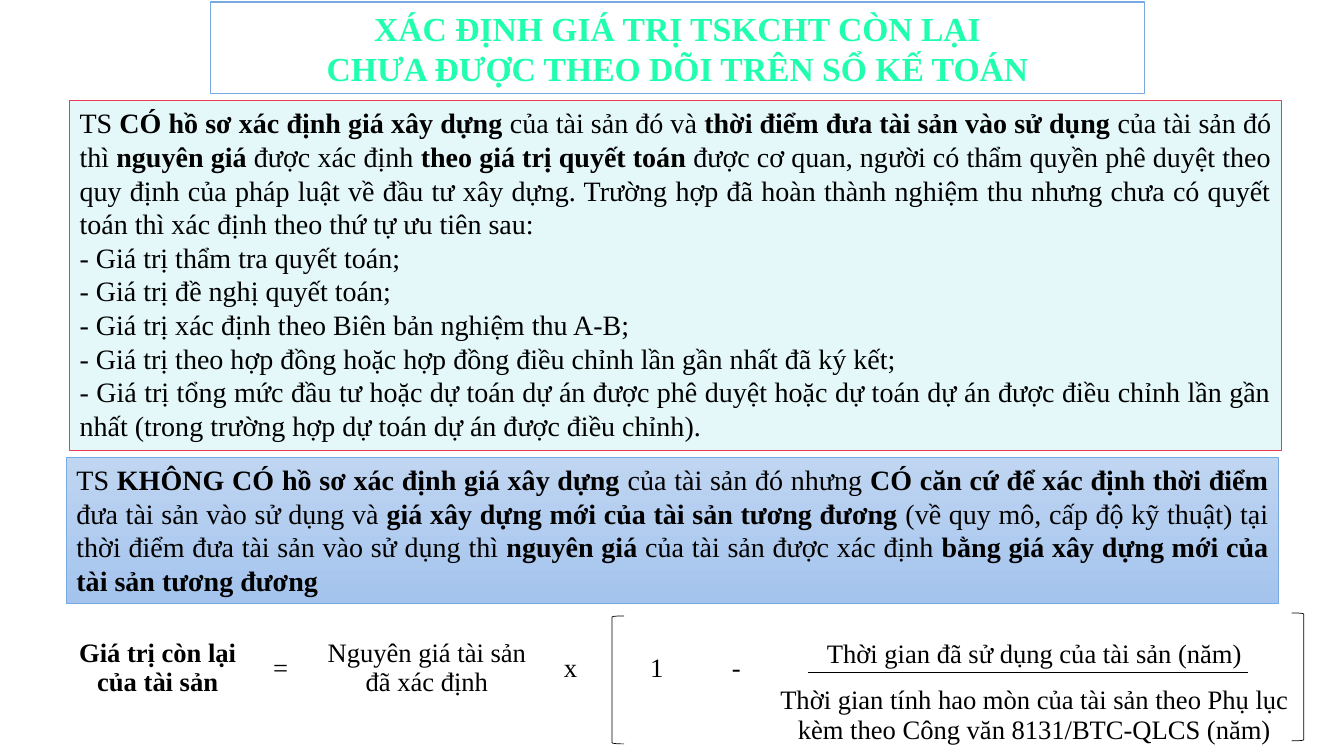
"""Build a slide on valuing infrastructure assets not yet recorded in the books."""
import pptx
import pptx.util
import pptx.dml.color
import pptx.enum.shapes
import pptx.enum.text
import pptx.oxml.ns
from dataclasses import dataclass
from lxml import etree

Pt = pptx.util.Pt
ALIGN = pptx.enum.text.PP_ALIGN
SHAPE = pptx.enum.shapes.MSO_SHAPE
ANCHOR = pptx.enum.text.MSO_ANCHOR
qn = pptx.oxml.ns.qn

TITLE = ["XÁC ĐỊNH GIÁ TRỊ TSKCHT CÒN LẠI", "CHƯA ĐƯỢC THEO DÕI TRÊN SỔ KẾ TOÁN"]

# Runs alternate between regular and bold.
WITH_FILE = [
    (ALIGN.JUSTIFY, [
        "TS ", "CÓ hồ sơ xác định giá xây dựng ", "của tài sản đó và ",
        "thời điểm đưa tài sản vào sử dụng ", "của tài sản đó thì ", "nguyên giá ",
        "được xác định ", "theo giá trị quyết toán ",
        "được cơ quan, người có thẩm quyền phê duyệt theo quy định của pháp luật về đầu tư "
        "xây dựng. Trường hợp đã hoàn thành nghiệm thu nhưng chưa có quyết toán thì xác định "
        "theo thứ tự ưu tiên sau:"]),
    (ALIGN.LEFT, ["- Giá trị thẩm tra quyết toán;"]),
    (ALIGN.LEFT, ["- Giá trị đề nghị quyết toán;"]),
    (ALIGN.LEFT, ["- Giá trị xác định theo Biên bản nghiệm thu A-B;"]),
    (ALIGN.LEFT, ["- Giá trị theo hợp đồng hoặc hợp đồng điều chỉnh lần gần nhất đã ký kết;"]),
    (ALIGN.JUSTIFY, [
        "- Giá trị tổng mức đầu tư hoặc dự toán dự án được phê duyệt hoặc dự toán dự án được "
        "điều chỉnh lần gần nhất (trong trường hợp dự toán dự án được điều chỉnh)."]),
]
WITHOUT_FILE = [
    (ALIGN.JUSTIFY, [
        "TS ", "KHÔNG CÓ hồ sơ xác định giá xây dựng ", "của tài sản đó nhưng ",
        "CÓ căn cứ để xác định thời điểm ", "đưa tài sản vào sử dụng và ",
        "giá xây dựng mới của tài sản tương đương",
        " (về quy mô, cấp độ kỹ thuật) tại thời điểm đưa tài sản vào sử dụng thì ",
        "nguyên giá ", "của tài sản được xác định ",
        "bằng giá xây dựng mới của tài sản tương đương"]),
]
FORMULA = [
    (1.71, ["", "Giá trị còn lại của tài sản"]),
    (0.73, ["="]),
    (2.17, ["Nguyên giá tài sản đã xác định"]),
    (0.68, ["x"]),
    (1.03, ["1"]),
    (0.55, ["-"]),
]
FRACTION_WIDTH = 5.36
FRACTION = ["Thời gian đã sử dụng của tài sản (năm)",
            "Thời gian tính hao mòn của tài sản theo Phụ lục kèm theo Công văn 8131/BTC-QLCS (năm)"]

PLACES = {
    "title": (15.68, 0.27, 69.47, 12.13),
    "with_file": (5.17, 13.33, 90.17, 46.27),
    "without_file": (4.95, 60.53, 90.17, 19.33),
    "formula": (5.32, 77.73, 91.75, 21.33),
}
BRACKETS = [(SHAPE.LEFT_BRACKET, (45.54, 81.47, 0.9, 16.93)),
            (SHAPE.RIGHT_BRACKET, (96.1, 81.07, 0.9, 16.93))]
FRACTION_BAR = (60.09, 92.87, 88.93)


@dataclass(frozen=True)
class Theme:
    font: str = "Times New Roman"
    title: str = "20FFAE"
    text: str = "000000"
    white: str = "FFFFFF"
    blue: str = "78AAE1"
    red: str = "ED3B55"
    mint: str = "E4F8F9"
    blue_top: str = "BFD5F1"
    blue_bottom: str = "A4C4ED"
    title_size: float = 24
    body_size: float = 20
    formula_size: float = 19
    title_leading: float = 28.5
    body_leading: float = 24
    formula_leading: float = 21


T = Theme()
prs = pptx.Presentation()
prs.slide_width = pptx.util.Inches(13.33)
prs.slide_height = pptx.util.Inches(7.5)


def rgb(value):
    return pptx.dml.color.RGBColor.from_string(value)


def x(share):
    return int(prs.slide_width * share / 100)


def y(share):
    return int(prs.slide_height * share / 100)


def box(place):
    left, top, width, height = place
    return x(left), y(top), x(width), y(height)


def place_shape(sp, place):
    sp.left, sp.top, sp.width, sp.height = box(place)


def outline(sp, color, width):
    sp.line.color.rgb = rgb(color)
    sp.line.width = Pt(width)


def solid(sp, color):
    sp.fill.solid()
    sp.fill.fore_color.rgb = rgb(color)


def write(tf, paragraphs, size, leading, color=T.text, gap=0):
    tf.word_wrap = True
    for i, (align, runs) in enumerate(paragraphs):
        p = tf.paragraphs[0] if i == 0 else tf.add_paragraph()
        pPr = p._p.get_or_add_pPr()
        pPr.set("marL", "0")
        pPr.set("indent", "0")
        etree.SubElement(pPr, qn("a:buNone"))
        p.alignment = align
        p.line_spacing = Pt(leading)
        p.space_before = Pt(gap if i else 0)
        for j, text in enumerate(runs):
            if text:
                r = p.add_run()
                r.text = text
                r.font.name = T.font
                r.font.size = Pt(size)
                r.font.bold = j % 2 == 1
                r.font.color.rgb = rgb(color)


def add_title(s):
    sp = s.shapes.title
    place_shape(sp, PLACES["title"])
    solid(sp, T.white)
    outline(sp, T.blue, 1)
    sp.text_frame.auto_size = pptx.enum.text.MSO_AUTO_SIZE.NONE
    write(sp.text_frame, [(ALIGN.CENTER, ["", line]) for line in TITLE],
          T.title_size, T.title_leading, T.title)


def add_with_file(s):
    sp = s.placeholders[1]
    place_shape(sp, PLACES["with_file"])
    solid(sp, T.mint)
    outline(sp, T.red, 0.5)
    sp.text_frame.auto_size = pptx.enum.text.MSO_AUTO_SIZE.NONE
    write(sp.text_frame, WITH_FILE, T.body_size, T.body_leading)


def add_without_file(s):
    sp = s.shapes.add_shape(SHAPE.RECTANGLE, *box(PLACES["without_file"]))
    sp.shadow.inherit = False
    sp.fill.gradient()
    sp.fill.gradient_angle = 270
    for stop, color in zip(sp.fill.gradient_stops, (T.blue_top, T.blue_bottom)):
        stop.color.rgb = rgb(color)
    outline(sp, T.blue, 0.5)
    sp.text_frame.vertical_anchor = ANCHOR.TOP
    write(sp.text_frame, WITHOUT_FILE, T.body_size, T.body_leading)


def add_formula(s):
    columns = [(w, [(ALIGN.CENTER, runs)]) for w, runs in FORMULA]
    columns.append((FRACTION_WIDTH, [(ALIGN.CENTER, [line]) for line in FRACTION]))
    table = s.shapes.add_table(1, len(columns), *box(PLACES["formula"])).table
    table.first_row = table.horz_banding = False
    for i, (width, paragraphs) in enumerate(columns):
        table.columns[i].width = pptx.util.Inches(width)
        cell = table.cell(0, i)
        cell.fill.background()
        cell.margin_left = cell.margin_right = cell.margin_top = cell.margin_bottom = 0
        cell.vertical_anchor = ANCHOR.MIDDLE
        write(cell.text_frame, paragraphs, T.formula_size, T.formula_leading, gap=12)
    cell.vertical_anchor = ANCHOR.TOP
    cell.margin_top = pptx.util.Inches(0.52)

    left, right, level = FRACTION_BAR
    bar = s.shapes.add_connector(pptx.enum.shapes.MSO_CONNECTOR.STRAIGHT,
                                 x(left), y(level), x(right), y(level))
    outline(bar, T.text, 0.5)
    etree.SubElement(bar._element.spPr, qn("a:effectLst"))
    for kind, place in BRACKETS:
        bracket = s.shapes.add_shape(kind, *box(place))
        bracket.shadow.inherit = False
        bracket.fill.background()
        outline(bracket, T.text, 0.5)


def main():
    s = prs.slides.add_slide(prs.slide_layouts[1])
    add_title(s)
    add_with_file(s)
    add_formula(s)
    add_without_file(s)
    prs.save("out.pptx")


if __name__ == "__main__":
    main()
